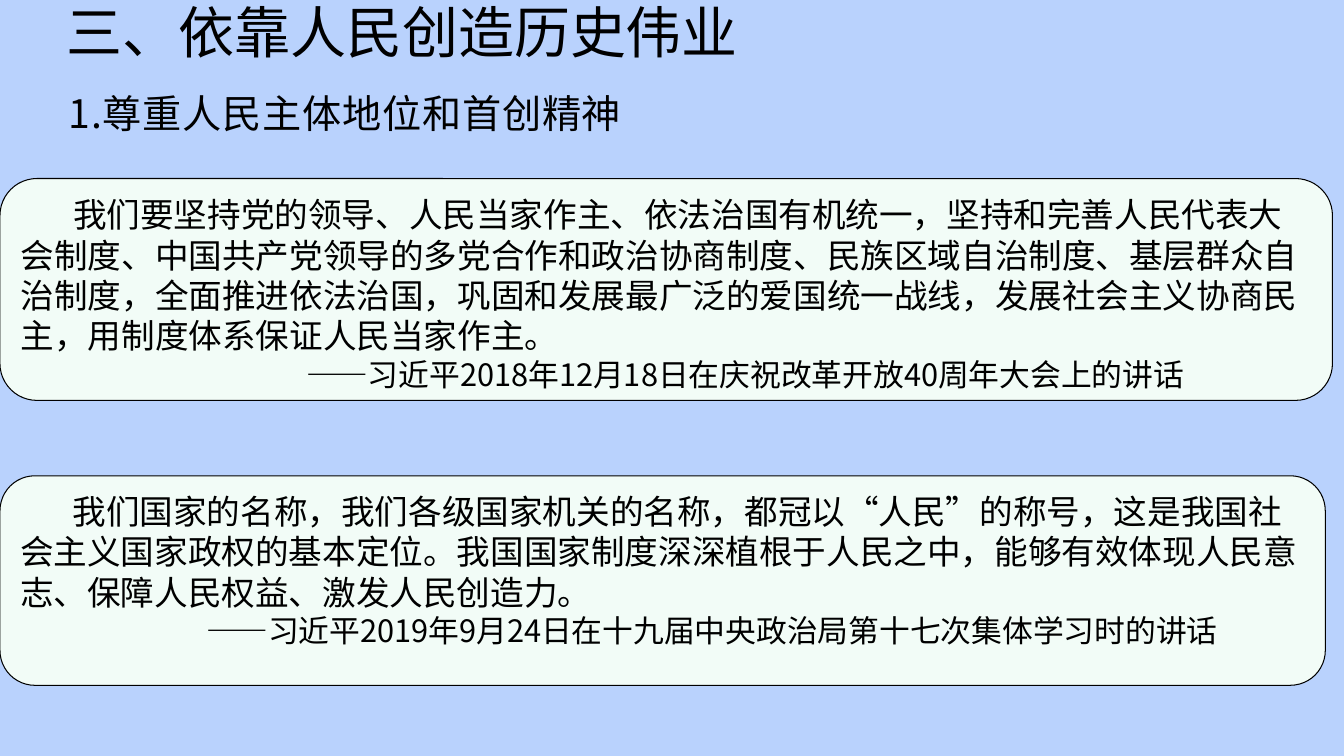
from dataclasses import dataclass

from lxml import etree
from pptx import Presentation
from pptx.dml.color import RGBColor
from pptx.enum.shapes import MSO_SHAPE
from pptx.enum.text import MSO_ANCHOR, PP_ALIGN
from pptx.oxml.ns import qn
from pptx.util import Cm, Pt

ROUNDED = MSO_SHAPE.ROUNDED_RECTANGLE
TOP = MSO_ANCHOR.TOP
LEFT = PP_ALIGN.LEFT


@dataclass(frozen=True)
class Theme:
    font: str = "Noto Sans CJK SC"
    background: RGBColor = RGBColor(0xB9, 0xD2, 0xFD)
    panel: RGBColor = RGBColor(0xF2, 0xFC, 0xF7)
    ink: RGBColor = RGBColor(0, 0, 0)
    title: Pt = Pt(40)
    subtitle: Pt = Pt(28)
    quote: Pt = Pt(24)
    source: Pt = Pt(22)
    outline: Pt = Pt(0.75)


theme = Theme()


def style(p, size, margin=0, indent=0):
    """Set the indents, font, size and colour of a paragraph."""
    p.alignment = LEFT
    pPr = p._p.get_or_add_pPr()
    pPr.set("marL", str(Cm(margin)))
    pPr.set("indent", str(Cm(indent)))
    for r in p.runs:
        r.font.size = size
        r.font.color.rgb = theme.ink
        r.font.name = theme.font
        ea = etree.SubElement(r._r.get_or_add_rPr(), qn("a:ea"))
        ea.set("typeface", theme.font)


prs = Presentation()
prs.slide_width, prs.slide_height = Cm(33.87), Cm(19.05)
s = prs.slides.add_slide(prs.slide_layouts[6])
s.background.fill.solid()
s.background.fill.fore_color.rgb = theme.background

# Title and subtitle: text, left, top, width, height, size, letter spacing
headings = [
    ("三、依靠人民创造历史伟业", 1.5, -0.15, 30.48, 1.7, theme.title, 0),
    ("1.尊重人民主体地位和首创精神", 1.55, 2.11, 32, 1.8, theme.subtitle, 60),
]
for text, left, top, width, height, size, spacing in headings:
    tf = s.shapes.add_textbox(Cm(left), Cm(top), Cm(width), Cm(height)).text_frame
    tf.word_wrap = True
    tf.margin_left = tf.margin_right = Cm(0.18)
    tf.margin_top = tf.margin_bottom = Cm(0.08 if spacing == 0 else 0.13)
    p = tf.paragraphs[0]
    p.text = text
    style(p, size)
    p.runs[0]._r.get_or_add_rPr().set("spc", str(spacing))

# Quotation panels: top, width, height, quote, source, source margin
panels = [
    (4.5, 33.58, 5.59,
     "我们要坚持党的领导、人民当家作主、依法治国有机统一，坚持和完善人民代表大会制度、"
     "中国共产党领导的多党合作和政治协商制度、民族区域自治制度、基层群众自治制度，"
     "全面推进依法治国，巩固和发展最广泛的爱国统一战线，发展社会主义协商民主，"
     "用制度体系保证人民当家作主。",
     "——习近平2018年12月18日在庆祝改革开放40周年大会上的讲话", 7.2),
    (11.99, 33.4, 5.28,
     "我们国家的名称，我们各级国家机关的名称，都冠以“人民”的称号，"
     "这是我国社会主义国家政权的基本定位。我国国家制度深深植根于人民之中，"
     "能够有效体现人民意志、保障人民权益、激发人民创造力。",
     "——习近平2019年9月24日在十九届中央政治局第十七次集体学习时的讲话", 4.7),
]
for top, width, height, quote, source, margin in panels:
    sp = s.shapes.add_shape(ROUNDED, Cm(0), Cm(top), Cm(width), Cm(height))
    sp.shadow.inherit = False
    sp.fill.solid()
    sp.fill.fore_color.rgb = theme.panel
    sp.line.color.rgb = theme.ink
    sp.line.width = theme.outline
    tf = sp.text_frame
    tf.word_wrap = True
    tf.vertical_anchor = TOP
    p = tf.paragraphs[0]
    p.text = quote
    style(p, theme.quote, indent=1.32)
    p = tf.add_paragraph()
    p.text = source
    style(p, theme.source, margin=margin)

prs.save("out.pptx")
